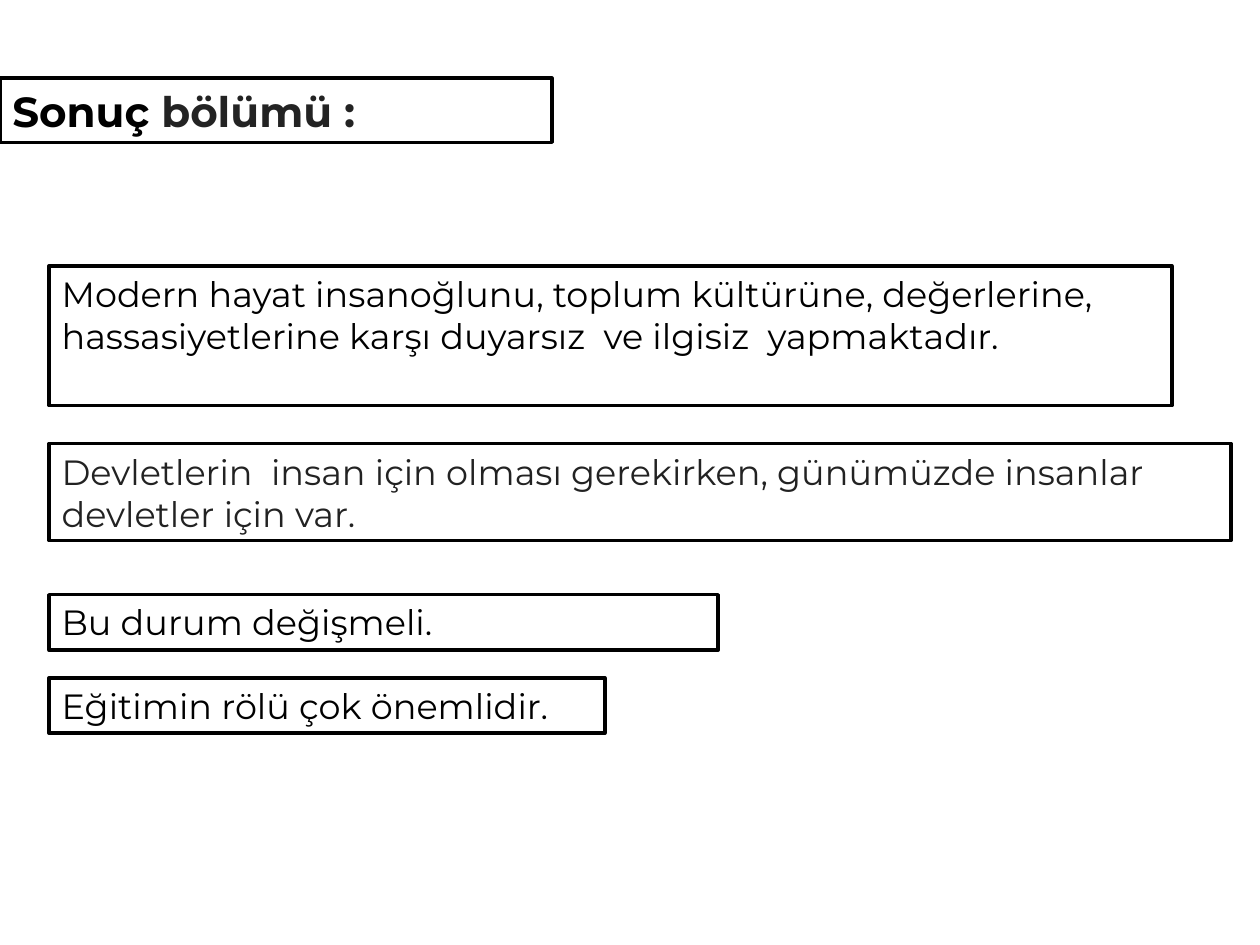
from pptx import Presentation
from pptx.dml.color import RGBColor
from pptx.enum.shapes import MSO_SHAPE as Shape
from pptx.enum.text import MSO_ANCHOR as Anchor, PP_ALIGN as Align
from pptx.util import Inches, Pt

FONT = "Montserrat"
BLACK, WHITE = "000000", "FFFFFF"
HEADING_GRAY, TEXT_GRAY = "232323", "222222"
STATEMENT_LEFT = 0.39

# Top, width, height, anchor, colour and wording of each statement
STATEMENTS = [
    (2.11, 8.91, 1.11, Anchor.TOP, BLACK,
     "Modern hayat insanoğlunu, toplum kültürüne, değerlerine, "
     "hassasiyetlerine karşı duyarsız  ve ilgisiz  yapmaktadır."),
    (3.52, 9.38, 0.77, Anchor.MIDDLE, TEXT_GRAY,
     "Devletlerin  insan için olması gerekirken, günümüzde insanlar "
     "devletler için var."),
    (4.72, 5.31, 0.44, Anchor.TOP, BLACK, "Bu durum değişmeli."),
    (5.38, 4.41, 0.44, Anchor.TOP, BLACK, "Eğitimin rölü çok önemlidir."),
]


def color(value):
    return RGBColor.from_string(value)


def add_run(paragraph, text, size, text_color, bold=False):
    run = paragraph.add_run()
    run.text = text
    run.font.name = FONT
    run.font.size = Pt(size)
    run.font.bold = bold
    run.font.color.rgb = color(text_color)


def add_box(slide, left, top, width, height, anchor, align=Align.LEFT):
    """Add a white outlined box and return its first paragraph."""
    shape = slide.shapes.add_shape(
        Shape.RECTANGLE, Inches(left), Inches(top), Inches(width), Inches(height))
    shape.shadow.inherit = False
    shape.fill.solid()
    shape.fill.fore_color.rgb = color(WHITE)
    shape.line.color.rgb = color(BLACK)
    shape.line.width = Pt(2)
    frame = shape.text_frame
    frame.word_wrap = True
    frame.vertical_anchor = anchor
    paragraph = frame.paragraphs[0]
    paragraph.alignment = align
    return paragraph


def main():
    presentation = Presentation()
    presentation.slide_width = Inches(10)
    presentation.slide_height = Inches(7.5)
    slide = presentation.slides.add_slide(presentation.slide_layouts[6])

    # Heading
    heading = add_box(slide, 0, 0.62, 4.38, 0.51, Anchor.MIDDLE, Align.JUSTIFY)
    add_run(heading, "Sonuç ", 24, BLACK, bold=True)
    add_run(heading, "bölümü :", 24, HEADING_GRAY, bold=True)

    # Statements
    for top, width, height, anchor, text_color, text in STATEMENTS:
        statement = add_box(slide, STATEMENT_LEFT, top, width, height, anchor)
        add_run(statement, text, 20, text_color)

    presentation.save("out.pptx")


if __name__ == "__main__":
    main()
